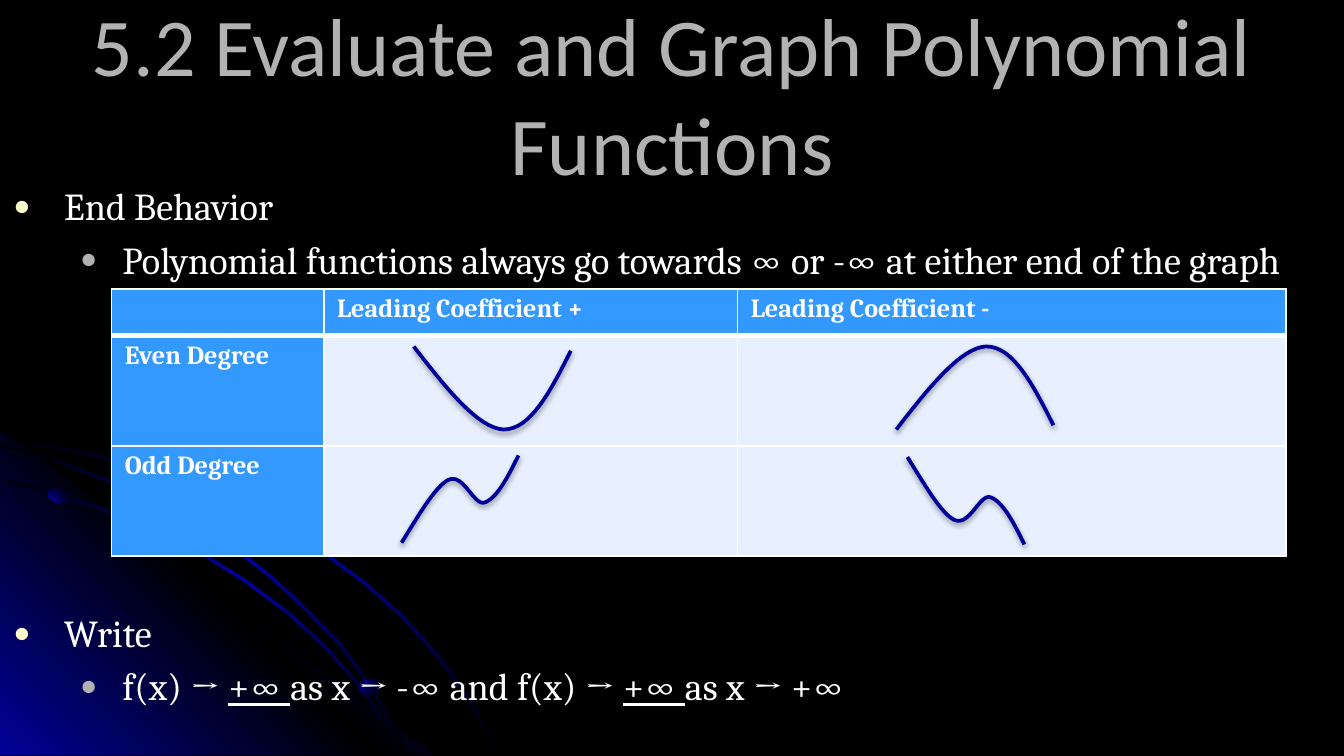
from copy import deepcopy

from lxml import etree
from pptx import Presentation
from pptx.dml.color import RGBColor
from pptx.enum import shapes, text
from pptx.oxml import parse_xml
from pptx.oxml import ns
from pptx.util import Cm, Pt

# Content
TITLE = "5.2 Evaluate and Graph Polynomial Functions"
# level, space before (pt), runs of (text, underlined)
OUTLINE = [
    (0, 4, [("End Behavior", False)]),
    (1, 4, [("Polynomial functions always go towards ∞ or -∞ at either end of the graph", False)]),
    (0, 175.5, [("Write", False)]),
    (1, 4, [("f(x) → ", False), ("+∞ ", True), ("as x → -∞ and f(x) → ", False),
            ("+∞ ", True), ("as x → +∞", False)]),
]
BEHAVIOR = [
    ["", "Leading Coefficient +", "Leading Coefficient -"],
    ["Even Degree", "", ""],
    ["Odd Degree", "", ""],
]
COLUMN_WIDTHS = [4.01, 7.82, 10.36]
ROW_HEIGHTS = [0.89, 2.08, 2.08]

# Graph curves: Bezier points in cm, from the curve's top left corner
EVEN = [(0, 0), (0.61, 0.79), (1.22, 1.55), (1.7, 1.57),
        (2.21, 1.57), (2.59, 0.84), (2.97, 0.08)]
ODD = [(0, 0), (0.33, 0.53), (0.64, 1.07), (0.89, 1.19), (1.17, 1.32), (1.37, 0.69),
       (1.57, 0.76), (1.8, 0.84), (2.01, 1.24), (2.21, 1.65)]
# curve, left, top, flipped upside down
GRAPHS = [(EVEN, 7.82, 6.55, False), (EVEN, 16.94, 6.55, True),
          (ODD, 7.59, 8.61, True), (ODD, 17.15, 8.64, False)]

# Backdrop: upper edges of the arcs, the corner glow, the beads
OUTER_ARC = [(0, 8.31), (0.71, 8.38), (1.45, 8.51), (2.49, 8.76), (3.45, 9.09), (4.42, 9.47),
             (5.31, 9.91), (6.15, 10.44), (6.91, 11), (7.62, 11.63), (8.26, 12.34),
             (8.61, 12.8), (8.94, 13.28), (9.2, 13.77), (9.45, 14.25)]
INNER_ARC = [(0, 9.04), (1.04, 9.3), (2.01, 9.63), (2.97, 10.01), (3.86, 10.46), (4.67, 10.97),
             (5.46, 11.56), (6.15, 12.19), (6.76, 12.88), (7.26, 13.56), (7.52, 13.89),
             (7.7, 14.25)]
MIDDLE_ARC = [(0, 8.41), (0.99, 8.66), (1.93, 9.02), (2.82, 9.37), (3.66, 9.83), (4.45, 10.34),
              (5.18, 10.92), (5.82, 11.51), (6.45, 12.17), (6.83, 12.67), (7.16, 13.18),
              (7.47, 13.72), (7.7, 14.25)]
GLOW = [(8.18, 14.27), (0, 14.27), (0, 8.13)]
BEADS = [(0.91, 9.22, 0.38, 0.28, 45), (6.78, 12.85, 0.41, 0.3, 315),
         (3.48, 9.02, 0.53, 0.41, 45)]

BLACK, NAVY, WHITE, GRAY = "000000", "010199", "FFFFFF", "B2B2B2"
BLUE, PALE, CREAM = "3399FF", "E8EFFF", "FFFFCC"
BULLETS = [(CREAM, 0.96, -0.96), (GRAY, 2.06, -0.8)]  # colour, margin, indent


def rgb(value):
    return RGBColor.from_string(value)


def style(run, font, size, color, bold=False, underline=False):
    run.font.name, run.font.size = font, Pt(size)
    run.font.color.rgb = rgb(color)
    run.font.bold, run.font.underline = bold, underline


def gradient(shape, colors, angle):
    """Spread the colours evenly; the angle runs anticlockwise."""
    shape.shadow.inherit = False
    shape.line.fill.background()
    shape.fill.gradient()
    shape.fill.gradient_angle = angle
    stop_list = shape._element.spPr.find(".//" + ns.qn("a:gsLst"))
    for _ in colors[2:]:
        stop_list.append(deepcopy(stop_list[-1]))
    for i, (stop, color) in enumerate(zip(shape.fill.gradient_stops, colors)):
        stop.color.rgb = rgb(color)
        stop.position = i / (len(colors) - 1)


def outline_shape(points, close):
    corners = [(Cm(x), Cm(y)) for x, y in points]
    builder = slide.shapes.build_freeform(*corners[0])
    builder.add_line_segments(corners[1:], close=close)
    return builder.convert_to_shape()


def bezier(points, steps=16):
    smooth = [points[0]]
    for i in range(0, len(points) - 1, 3):
        for t in (n / steps for n in range(1, steps + 1)):
            weights = ((1 - t) ** 3, 3 * t * (1 - t) ** 2, 3 * t * t * (1 - t), t ** 3)
            smooth.append(tuple(sum(w * p[axis] for w, p in zip(weights, points[i:i + 4]))
                                for axis in (0, 1)))
    return smooth


def border(cell, side, width):
    cell._tc.get_or_add_tcPr().append(parse_xml(
        f'<a:ln{side} {ns.nsdecls("a")} w="{Pt(width)}"><a:solidFill>'
        f'<a:srgbClr val="{WHITE}"/></a:solidFill></a:ln{side}>'))


deck = Presentation()
deck.slide_width, deck.slide_height = Cm(25.4), Cm(14.29)
slide = deck.slides.add_slide(deck.slide_layouts[1])
slide.background.fill.solid()
slide.background.fill.fore_color.rgb = rgb(BLACK)

# Backdrop
for edge in (OUTER_ARC, GLOW, INNER_ARC, MIDDLE_ARC):
    if edge is GLOW:
        gradient(outline_shape(edge, True), [NAVY, BLACK, NAVY], 45)
    else:
        lower_edge = [(max(0, x - 0.05), y + 0.03) for x, y in reversed(edge)]
        gradient(outline_shape(edge + lower_edge, True), [BLACK, NAVY, BLACK], 315)
for left, top, width, height, angle in BEADS:
    bead = slide.shapes.add_shape(shapes.MSO_SHAPE.OVAL, Cm(left), Cm(top), Cm(width), Cm(height))
    gradient(bead, [NAVY, BLACK], angle)

# Title and outline, brought in front of the backdrop
title, body = slide.shapes.title, slide.placeholders[1]
for part, top, height in ((title, 0.58, 2.36), (body, 3.33, 9.45)):
    slide.shapes._spTree.append(part._element)
    part.left, part.top, part.width, part.height = 0, Cm(top), Cm(25.4), Cm(height)
    part.text_frame.word_wrap = True
    part.text_frame.auto_size = text.MSO_AUTO_SIZE.NONE
title.text_frame.vertical_anchor = text.MSO_ANCHOR.MIDDLE
heading = title.text_frame.paragraphs[0]
heading.alignment = text.PP_ALIGN.CENTER
heading_run = heading.add_run()
heading_run.text = TITLE
style(heading_run, "Calibri", 44, GRAY)

for i, (level, space, runs) in enumerate(OUTLINE):
    item = body.text_frame.add_paragraph() if i else body.text_frame.paragraphs[0]
    item.level, item.space_before = level, Pt(space)
    bullet_color, margin, indent = BULLETS[level]
    properties = item._p.get_or_add_pPr()
    properties.set("marL", str(Cm(margin)))
    properties.set("indent", str(Cm(indent)))
    for xml in (f'<a:buClr {ns.nsdecls("a")}><a:srgbClr val="{bullet_color}"/></a:buClr>',
                f'<a:buSzPct {ns.nsdecls("a")} val="75000"/>',
                f'<a:buChar {ns.nsdecls("a")} char="●"/>'):
        properties.append(parse_xml(xml))
    for words, underlined in runs:
        run = item.add_run()
        run.text = words
        style(run, "Cambria", 20.4, WHITE, underline=underlined)

# End behavior table
table = slide.shapes.add_table(3, 3, Cm(2.11), Cm(5.46), Cm(sum(COLUMN_WIDTHS)),
                               Cm(sum(ROW_HEIGHTS))).table
for column, width in zip(table.columns, COLUMN_WIDTHS):
    column.width = Cm(width)
for row, height in zip(table.rows, ROW_HEIGHTS):
    row.height = Cm(height)
for r, labels in enumerate(BEHAVIOR):
    for c, label in enumerate(labels):
        cell = table.cell(r, c)
        cell.margin_left = cell.margin_right = Cm(0.25)
        cell.margin_top = cell.margin_bottom = Cm(0.1)
        for side in "LRTB":
            thick = (r, side) in ((0, "B"), (1, "T"))
            border(cell, side, 3 if thick else 1)
        cell.fill.solid()
        cell.fill.fore_color.rgb = rgb(BLUE if r == 0 or c == 0 else PALE)
        entry = cell.text_frame.paragraphs[0]
        if label:
            run = entry.add_run()
            run.text = label
            style(run, "Cambria", 14, WHITE, bold=True)
        else:
            etree.SubElement(entry._p, ns.qn("a:endParaRPr")).set("sz", "1400")

# Graph sketches
for curve, left, top, flipped in GRAPHS:
    depth = max(y for _, y in curve)
    placed = [(left + x, top + (depth - y if flipped else y)) for x, y in curve]
    graph = outline_shape(bezier(placed), False)
    graph.fill.background()
    graph.line.color.rgb, graph.line.width = rgb(NAVY), Pt(2)
    graph._element.spPr.append(parse_xml(
        f'<a:effectLst {ns.nsdecls("a")}><a:outerShdw blurRad="{Pt(3.1)}" dist="{Pt(1.6)}" '
        f'dir="5400000" rotWithShape="0"><a:srgbClr val="{BLACK}"><a:alpha val="38000"/>'
        '</a:srgbClr></a:outerShdw></a:effectLst>'))

deck.save("out.pptx")
